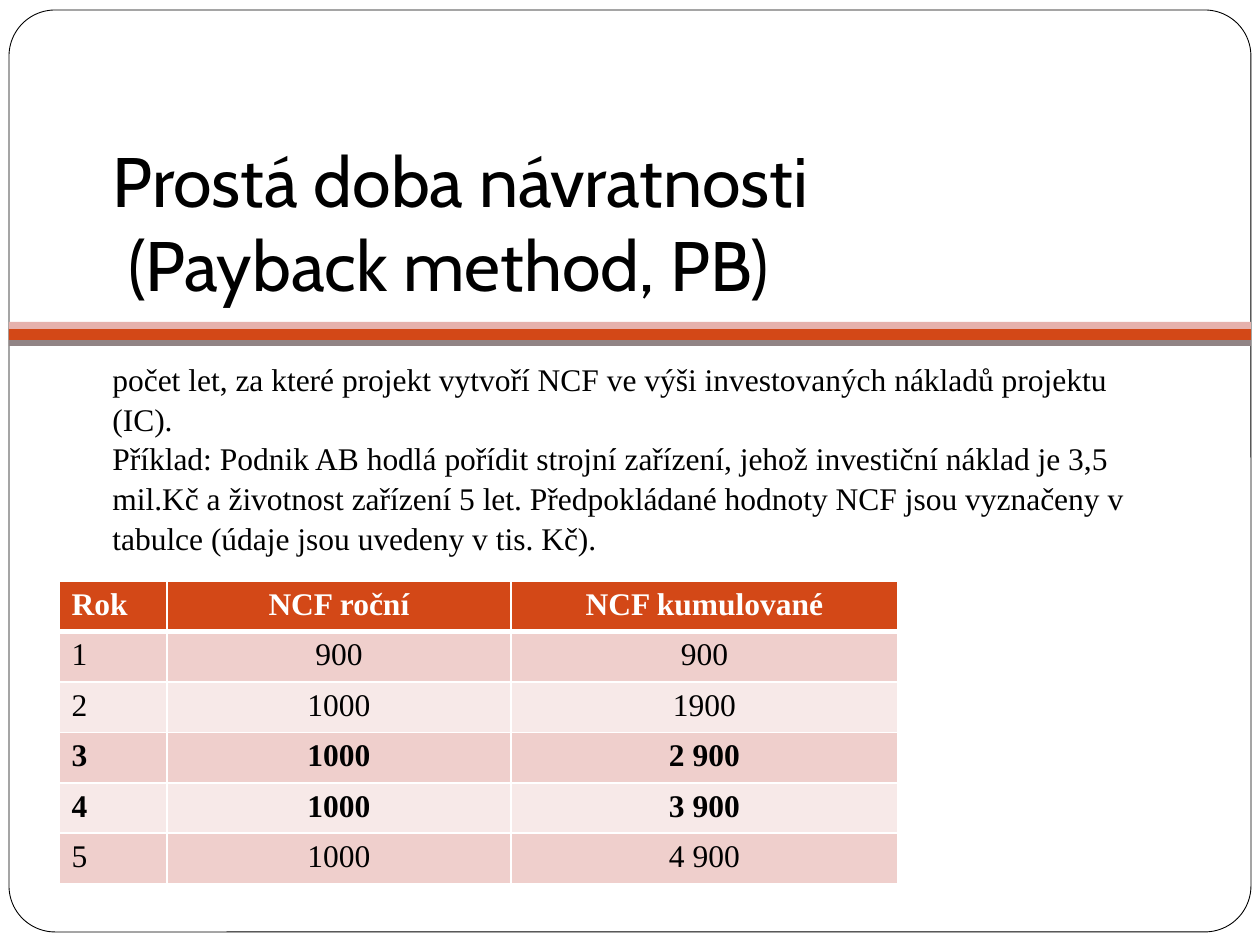
from lxml.etree import SubElement
from pptx import Presentation
from pptx.dml.color import RGBColor
from pptx.enum.shapes import MSO_SHAPE as Shape
from pptx.enum.text import MSO_ANCHOR as Anchor, MSO_AUTO_SIZE as AutoSize, PP_ALIGN as Align
from pptx.oxml.ns import qn
from pptx.util import Pt

EMU_PER_PX = 914400 / 126

BLACK = RGBColor(0x00, 0x00, 0x00)
WHITE = RGBColor(0xFF, 0xFF, 0xFF)
ORANGE = RGBColor(0xD3, 0x48, 0x17)
PINK = RGBColor(0xE6, 0xB1, 0xAC)
GREY = RGBColor(0x91, 0x84, 0x85)
ROW_DARK = RGBColor(0xEF, 0xCF, 0xCC)
ROW_LIGHT = RGBColor(0xF7, 0xE9, 0xE8)

HEADING_FONT = "Cabin"
TEXT_FONT = "Times New Roman"

TITLE_LINES = ["Prostá doba návratnosti", " (Payback method, PB)"]
BODY = [
    "počet let, za které projekt vytvoří NCF ve výši investovaných nákladů projektu (IC).",
    "Příklad: Podnik AB hodlá pořídit strojní zařízení, jehož investiční náklad je 3,5 mil.Kč "
    "a životnost zařízení 5 let. Předpokládané hodnoty NCF jsou vyznačeny v tabulce "
    "(údaje jsou uvedeny v tis. Kč).",
]
CASH_FLOWS = [
    ["Rok", "NCF roční", "NCF kumulované"],
    ["1", "900", "900"],
    ["2", "1000", "1900"],
    ["3", "1000", "2 900"],
    ["4", "1000", "3 900"],
    ["5", "1000", "4 900"],
]
BOLD_ROWS = {0, 3, 4}
COLUMN_WIDTHS = [108, 344, 387]
ROW_HEIGHT = 49


def px(value):
    return round(value * EMU_PER_PX)


def place(*lengths):
    return [px(length) for length in lengths]


def add_span(para, text, size, font=TEXT_FONT, color=BLACK, bold=False):
    span = para.add_run()
    span.text = text
    span.font.size = Pt(size)
    span.font.name = font
    span.font.color.rgb = color
    span.font.bold = bold


def add_block(slide, kind, box, fill):
    block = slide.shapes.add_shape(kind, *place(*box))
    block.shadow.inherit = False
    block.fill.solid()
    block.fill.fore_color.rgb = fill
    block.line.fill.background()
    return block


def add_backdrop(slide):
    frame = add_block(slide, Shape.ROUNDED_RECTANGLE, (9, 10, 1242, 922), WHITE)
    frame.adjustments[0] = 0.05
    frame.line.color.rgb = BLACK
    frame.line.width = Pt(0.5)
    for top, height, color in [(328, 12, ORANGE), (322, 7, PINK), (340, 6, GREY)]:
        add_block(slide, Shape.RECTANGLE, (9, top, 1242, height), color)


def set_title(slide):
    title = slide.shapes.title
    title.left, title.top, title.width, title.height = place(100, 131, 1071, 188)
    frame = title.text_frame
    frame.auto_size = AutoSize.NONE
    frame.vertical_anchor = Anchor.BOTTOM
    frame.margin_bottom = px(13)
    para = frame.paragraphs[0]
    para.alignment = Align.LEFT
    for index, line in enumerate(TITLE_LINES):
        if index:
            para.add_line_break()
        add_span(para, line, 40, HEADING_FONT)
    # Bring the title in front of the backdrop
    title.element.getparent().append(title.element)


def add_body(slide):
    frame = slide.shapes.add_textbox(*place(100, 352, 1071, 593)).text_frame
    frame.word_wrap = True
    for index, text in enumerate(BODY):
        para = frame.add_paragraph() if index else frame.paragraphs[0]
        para.line_spacing = 1.05
        add_span(para, text, 18)


def set_borders(cell, widths):
    """Draw white borders; widths holds points for left, right, top, bottom."""
    properties = cell._tc.get_or_add_tcPr()
    for side, width in zip("LRTB", widths):
        line = SubElement(properties, qn(f"a:ln{side}"), w=str(Pt(width)))
        fill = SubElement(line, qn("a:solidFill"))
        SubElement(fill, qn("a:srgbClr"), val=str(WHITE))


def fill_cell(cell, text, row, column):
    header = row == 0
    set_borders(cell, (1, 1, 3 if row == 1 else 1, 3 if header else 1))
    cell.fill.solid()
    cell.fill.fore_color.rgb = ORANGE if header else ROW_DARK if row % 2 else ROW_LIGHT
    para = cell.text_frame.paragraphs[0]
    para.alignment = Align.CENTER if column else Align.LEFT
    add_span(para, text, 18, color=WHITE if header else BLACK, bold=row in BOLD_ROWS)


def add_cash_flow_table(slide):
    rows, columns = len(CASH_FLOWS), len(COLUMN_WIDTHS)
    box = place(59, 581, sum(COLUMN_WIDTHS), ROW_HEIGHT * rows)
    table = slide.shapes.add_table(rows, columns, *box).table
    for column, width in zip(table.columns, COLUMN_WIDTHS):
        column.width = px(width)
    for row, values in enumerate(CASH_FLOWS):
        for column, text in enumerate(values):
            fill_cell(table.cell(row, column), text, row, column)


def main():
    deck = Presentation()
    deck.slide_width, deck.slide_height = place(1260, 945)
    slide = deck.slides.add_slide(deck.slide_layouts[5])
    add_backdrop(slide)
    set_title(slide)
    add_body(slide)
    add_cash_flow_table(slide)
    deck.save("out.pptx")


if __name__ == "__main__":
    main()
